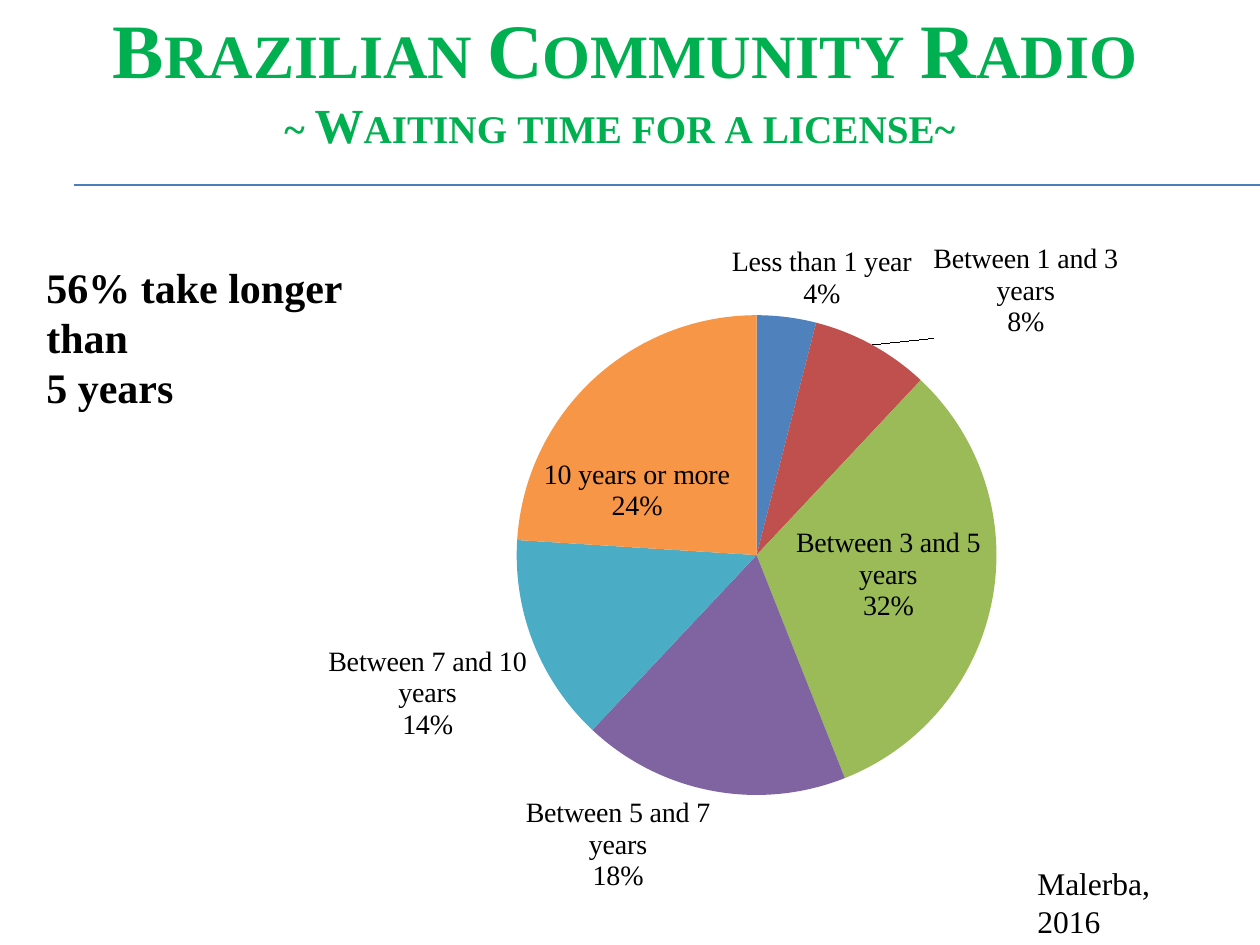
from lxml.etree import SubElement
from pptx import Presentation
from pptx.chart.data import CategoryChartData
from pptx.dml.color import RGBColor
from pptx.enum.chart import XL_CHART_TYPE as ChartType, XL_LABEL_POSITION as LabelPos
from pptx.enum.shapes import MSO_CONNECTOR as Connector
from pptx.enum.text import MSO_ANCHOR as Anchor, PP_ALIGN as Align
from pptx.oxml import parse_xml
from pptx.oxml.ns import nsdecls, qn
from pptx.util import Pt

PX = 914400 // 126
FONT = "Times New Roman"
BLACK = RGBColor(0x00, 0x00, 0x00)
GREEN = RGBColor(0x00, 0xB0, 0x50)
RULE_BLUE = RGBColor(0x4B, 0x7E, 0xBC)
BLUE = RGBColor(0x4F, 0x81, 0xBD)
RED = RGBColor(0xC0, 0x50, 0x4D)
OLIVE = RGBColor(0x9B, 0xBB, 0x59)
PURPLE = RGBColor(0x80, 0x64, 0xA2)
TEAL = RGBColor(0x4B, 0xAC, 0xC6)
ORANGE = RGBColor(0xF7, 0x96, 0x46)

# waiting time, percent, colour, label position, label shift in px
WAITS = [
    ("Less than 1 year", 4, BLUE, LabelPos.OUTSIDE_END, (-56, 0)),
    ("Between 1 and 3 years", 8, RED, LabelPos.OUTSIDE_END, (58, 0)),
    ("Between 3 and 5 years", 32, OLIVE, LabelPos.CENTER, (14, -3)),
    ("Between 5 and 7 years", 18, PURPLE, LabelPos.OUTSIDE_END, None),
    ("Between 7 and 10 years", 14, TEAL, LabelPos.OUTSIDE_END, None),
    ("10 years or more", 24, ORANGE, LabelPos.CENTER, (-38, 23)),
]


def emu(*lengths):
    return [length * PX for length in lengths]


def set_font(font, color=BLACK, **values):
    font.color.rgb = color
    for name, value in {"name": FONT, **values}.items():
        setattr(font, name, value)


def add_text(slide, box, lines, anchor=Anchor.TOP, align=Align.LEFT, **values):
    """Place one paragraph for each (text, points) pair."""
    frame = slide.shapes.add_textbox(*emu(*box)).text_frame
    frame.word_wrap = True
    frame.vertical_anchor = anchor
    for index, (text, points) in enumerate(lines):
        paragraph = frame.add_paragraph() if index else frame.paragraphs[0]
        paragraph.alignment = align
        run = paragraph.add_run()
        run.text = text
        set_font(run.font, size=Pt(points), **values)
    return frame


def add_heading(slide, box):
    left, top, width, height = box
    title = add_text(slide, box,
                     [("Brazilian Community Radio", 44), ("~ Waiting time for a license~ ", 28)],
                     Anchor.MIDDLE, Align.CENTER, color=GREEN, bold=True)
    for paragraph in title.paragraphs:
        for run in paragraph.runs:
            run.font._element.set("cap", "small")
    rule_y = top + height + 6
    rule = slide.shapes.add_connector(Connector.STRAIGHT, *emu(left + 99, rule_y, 1260, rule_y))
    rule.line.color.rgb = RULE_BLUE
    rule.line.width = Pt(0.75)
    SubElement(rule._element.spPr, qn("a:effectLst"))


def manual_layout(**values):
    parts = "".join(f'<c:{name} val="{value}"/>' for name, value in values.items())
    return parse_xml(f'<c:layout {nsdecls("c")}><c:manualLayout>{parts}</c:manualLayout></c:layout>')


def label_slice(point, text, color, position):
    point.format.fill.solid()
    point.format.fill.fore_color.rgb = color
    label = point.data_label
    label.text_frame.text = text
    for paragraph in label.text_frame.paragraphs:
        for run in paragraph.runs:
            set_font(run.font, size=Pt(16))
    label.position = position


def add_waiting_pie(slide, box):
    width, height = box[2:]
    data = CategoryChartData(number_format="General")
    data.categories = [wait[0] for wait in WAITS]
    data.add_series("Series 1", [wait[1] for wait in WAITS])
    chart = slide.shapes.add_chart(ChartType.PIE, *emu(*box), data).chart
    chart.has_title = False
    chart.has_legend = False
    set_font(chart.font, size=Pt(10))
    pie = chart.plots[0]
    pie.vary_by_categories = True

    series = pie.series[0]
    labels = series.data_labels
    for name, value in {"show_category_name": True, "show_percentage": True, "show_value": False,
                        "number_format": "0%", "number_format_is_linked": False}.items():
        setattr(labels, name, value)
    set_font(labels.font, size=Pt(16))
    for index, (name, percent, color, position, _) in enumerate(WAITS):
        label_slice(series.points[index], f"{name}\n{percent}%", color, position)
    for label, wait in zip(series._element.xpath("c:dLbls/c:dLbl"), WAITS):
        if wait[-1]:
            dx, dy = wait[-1]
            label.find(qn("c:idx")).addnext(
                manual_layout(x=round(dx / width, 3), y=round(dy / height, 3)))

    plot_area = chart._chartSpace.chart.plotArea
    for layout in plot_area.findall(qn("c:layout")):
        plot_area.remove(layout)
    diameter = 480
    plot_area.insert(0, manual_layout(
        layoutTarget="inner", xMode="edge", yMode="edge",
        x=round(328 / width, 3), y=round(101 / height, 3),
        w=round(diameter / width, 3), h=round(diameter / height, 3)))


def main():
    deck = Presentation()
    deck.slide_width, deck.slide_height = emu(1260, 945)
    slide = deck.slides.add_slide(deck.slide_layouts[6])
    add_heading(slide, (-25, -24, 1300, 203))
    add_waiting_pie(slide, (189, 214, 1071, 697))
    add_text(slide, (34, 255, 402, 115), [("56% take longer than", 24), ("5 years", 24)], bold=True)
    add_text(slide, (1025, 858, 200, 50), [("Malerba, 2016", 18)])
    deck.save("out.pptx")


if __name__ == "__main__":
    main()
